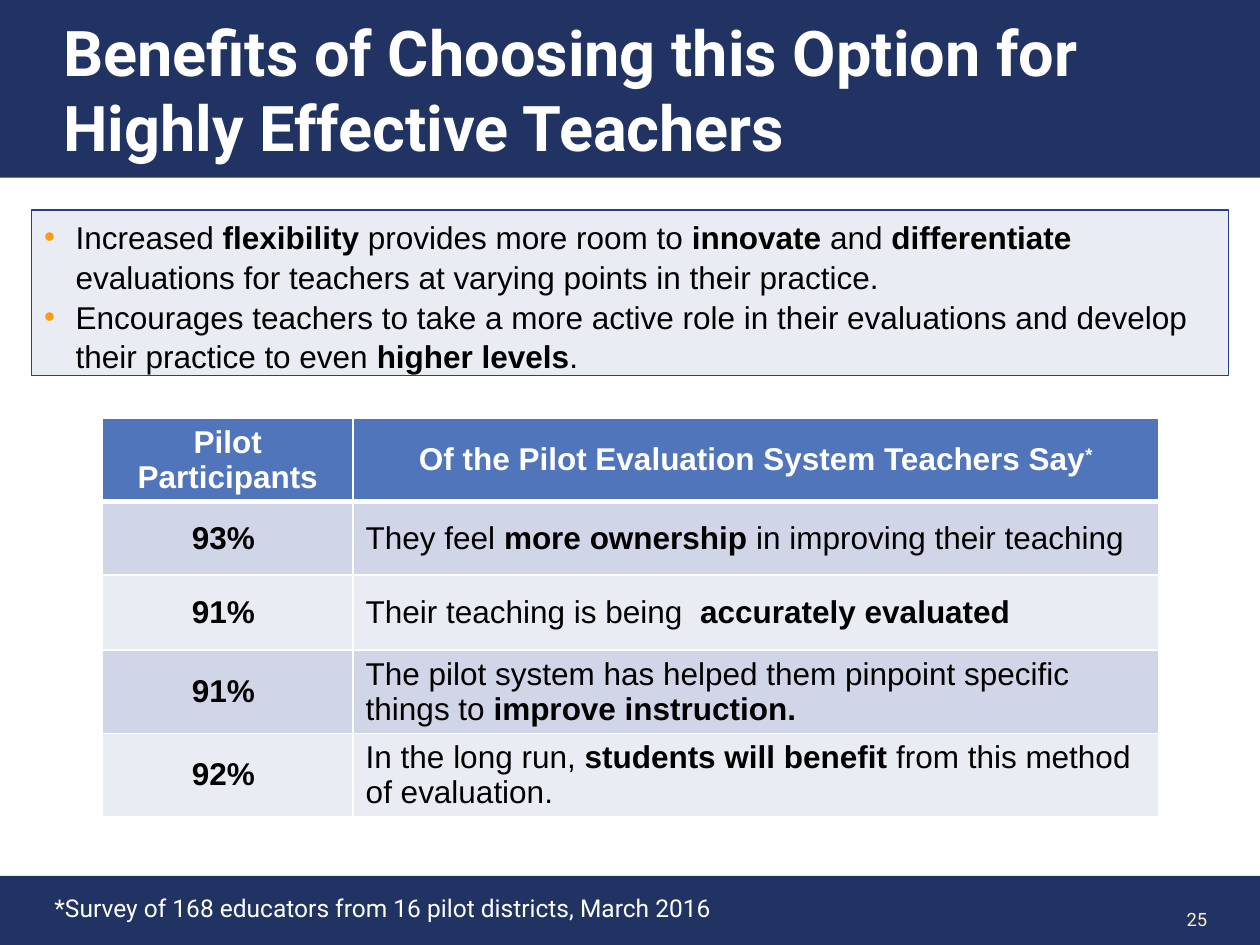
from dataclasses import dataclass

from lxml import etree
from pptx import Presentation
from pptx.dml.color import RGBColor
from pptx.enum import shapes, text
from pptx.oxml import ns
from pptx.util import Pt


@dataclass(frozen=True)
class Theme:
    navy: str = "213363"
    outline: str = "214189"
    header: str = "5075BB"
    band: str = "D0D6E7"
    pale: str = "E9ECF3"
    orange: str = "F89C15"
    cream: str = "FEEBD0"
    white: str = "FFFFFF"
    black: str = "000000"
    heading_font: str = "Roboto"
    body_font: str = "Arial"
    title_size: float = 36
    body_size: float = 18
    note_size: float = 14
    number_size: float = 10.5


THEME = Theme()
LEFT, CENTER, RIGHT = text.PP_ALIGN.LEFT, text.PP_ALIGN.CENTER, text.PP_ALIGN.RIGHT
MIDDLE, TOP = text.MSO_ANCHOR.MIDDLE, text.MSO_ANCHOR.TOP

BENEFITS = [
    "Increased **flexibility** provides more room to **innovate** and **differentiate**"
    " evaluations for teachers at varying points in their practice.",
    "Encourages teachers to take a more active role in their evaluations and develop"
    " their practice to even **higher levels**.",
]
SURVEY = [
    ("**Pilot Participants**", "**Of the Pilot Evaluation System Teachers Say**"),
    ("**93% **", "They feel **more ownership **in improving their teaching"),
    ("**91% **", "Their teaching is being  **accurately evaluated**"),
    ("**91% **", "The pilot system has helped them pinpoint specific things to "
                 "**improve instruction.**"),
    ("**92% **", "In the long run, **students will benefit **from this method of evaluation."),
]
COLUMN_WIDTHS = [143.3, 460.1]
ROW_HEIGHTS = [46, 42, 43, 46, 46]


def color(value):
    return RGBColor.from_string(value)


def add_child(parent, tag, **values):
    child = etree.SubElement(parent, ns.qn(tag))
    for name, value in values.items():
        child.set(name, str(value))
    return child


def place(item, left, top, width, height):
    bounds = {"left": left, "top": top, "width": width, "height": height}
    for name, value in bounds.items():
        setattr(item, name, Pt(value))


def format_frame(frame, **changes):
    settings = {"word_wrap": True, "auto_size": text.MSO_AUTO_SIZE.NONE,
                "vertical_anchor": MIDDLE, "margin_left": Pt(7.2),
                "margin_right": Pt(7.2), "margin_top": Pt(3.6),
                "margin_bottom": Pt(3.6)}
    for name, value in (settings | changes).items():
        setattr(frame, name, value)


def write(para, words, font, size, ink, align=LEFT, bold=False):
    """Fill a paragraph; words between double asterisks are bold."""
    para.alignment = align
    para.space_before = Pt(0)
    for index, part in enumerate(words.split("**")):
        if part:
            span = para.add_run()
            span.text = part
            values = {"name": font, "size": Pt(size), "bold": bold or index % 2 == 1}
            for name, value in values.items():
                setattr(span.font, name, value)
            span.font.color.rgb = color(ink)


def add_bullet(para):
    settings = para._p.get_or_add_pPr()
    settings.set("marL", str(Pt(18)))
    settings.set("indent", str(-Pt(18)))
    add_child(add_child(settings, "a:buClr"), "a:srgbClr", val=THEME.orange)
    add_child(settings, "a:buFont", typeface=THEME.body_font)
    add_child(settings, "a:buChar", char="•")


def set_borders(cell, bottom):
    settings = cell._tc.get_or_add_tcPr()
    widths = {"a:lnL": 1, "a:lnR": 1, "a:lnT": 1, "a:lnB": bottom}
    for tag, width in widths.items():
        line = add_child(settings, tag, w=Pt(width))
        add_child(add_child(line, "a:solidFill"), "a:srgbClr", val=THEME.white)


def add_text(page, words, box, size, ink, align=LEFT, **frame_values):
    label = page.shapes.add_textbox(*map(Pt, box))
    format_frame(label.text_frame, **frame_values)
    write(label.text_frame.paragraphs[0], words, THEME.heading_font, size, ink, align)


def fill_title(title, box):
    place(title, *box)
    title.fill.solid()
    title.fill.fore_color.rgb = color(THEME.navy)
    format_frame(title.text_frame, margin_left=Pt(36))
    write(title.text_frame.paragraphs[0],
          "Benefits of Choosing this Option for Highly Effective Teachers",
          THEME.heading_font, THEME.title_size, THEME.white, bold=True)


def fill_benefits(body, box):
    place(body, *box)
    body.fill.solid()
    body.fill.fore_color.rgb = color(THEME.pale)
    body.line.color.rgb = color(THEME.outline)
    body.line.width = Pt(0.75)
    frame = body.text_frame
    format_frame(frame, vertical_anchor=TOP)
    for index, words in enumerate(BENEFITS):
        para = frame.add_paragraph() if index else frame.paragraphs[0]
        add_bullet(para)
        write(para, words, THEME.body_font, THEME.body_size, THEME.black)
        para.line_spacing = 1.05


def add_survey(page, box):
    table = page.shapes.add_table(len(SURVEY), len(COLUMN_WIDTHS), *map(Pt, box)).table
    table.horz_banding = False
    for column, width in zip(table.columns, COLUMN_WIDTHS):
        column.width = Pt(width)
    for row, height in zip(table.rows, ROW_HEIGHTS):
        row.height = Pt(height)
    for row, entries in enumerate(SURVEY):
        fill = THEME.header if row == 0 else (THEME.pale, THEME.band)[row % 2]
        ink = THEME.black if row else THEME.white
        for column, words in enumerate(entries):
            cell = table.cell(row, column)
            set_borders(cell, bottom=1 if row else 3)
            cell.fill.solid()
            cell.fill.fore_color.rgb = color(fill)
            cell.vertical_anchor = MIDDLE
            align = LEFT if row and column else CENTER
            write(cell.text_frame.paragraphs[0], words, THEME.body_font,
                  THEME.body_size, ink, align)
    heading = table.cell(0, 1).text_frame.paragraphs[0]
    write(heading, "*", THEME.body_font, THEME.body_size, THEME.white, CENTER, bold=True)
    heading.runs[-1]._r.get_or_add_rPr().set("baseline", "30000")


def add_footer(page, box):
    left, top, width, height = box
    strip = page.shapes.add_shape(shapes.MSO_SHAPE.RECTANGLE, *map(Pt, box))
    strip.shadow.inherit = False
    strip.fill.solid()
    strip.fill.fore_color.rgb = color(THEME.navy)
    strip.line.fill.background()
    add_text(page, "*Survey of 168 educators from 16 pilot districts, March 2016",
             (left + 24, top + 6.5, 392.5, 24.5), THEME.note_size, THEME.white,
             vertical_anchor=TOP, word_wrap=False)
    add_text(page, "25", (left + width - 128, top + 10, 105, 29),
             THEME.number_size, THEME.cream, RIGHT)


def main():
    deck = Presentation()
    deck.slide_width, deck.slide_height = Pt(720), Pt(540)
    page = deck.slides.add_slide(deck.slide_layouts[1])
    fill_title(page.shapes.title, (0, 0, 720, 101.5))
    fill_benefits(page.placeholders[1], (18, 120, 684, 94.5))
    add_survey(page, (58.5, 239, sum(COLUMN_WIDTHS), sum(ROW_HEIGHTS)))
    add_footer(page, (0, 500.5, 720, 39.5))
    deck.save("out.pptx")


if __name__ == "__main__":
    main()
